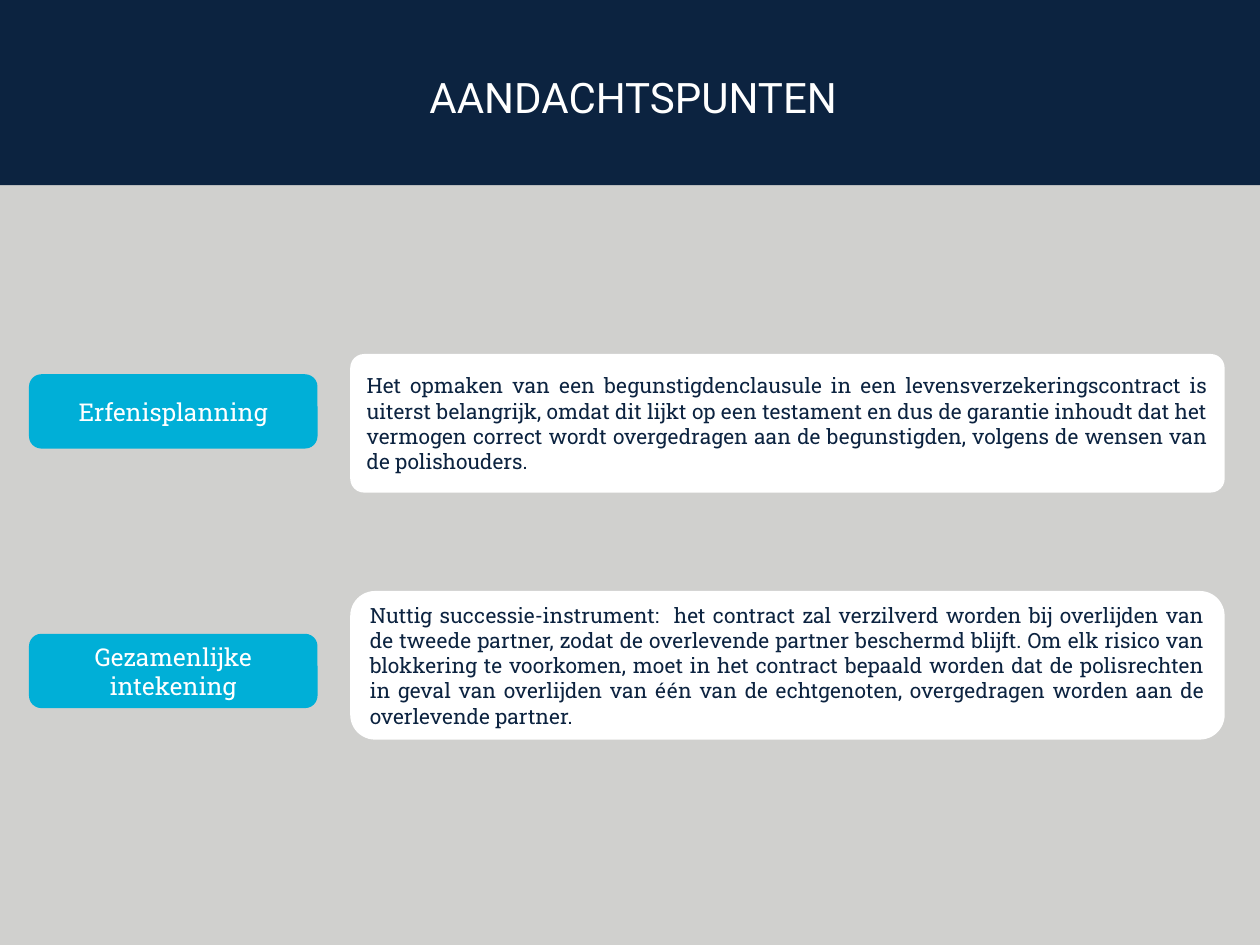
from dataclasses import dataclass

from pptx import Presentation
from pptx.dml.color import RGBColor
from pptx.enum.shapes import MSO_SHAPE
from pptx.enum.text import MSO_ANCHOR, PP_ALIGN
from pptx.util import Inches, Pt


@dataclass(frozen=True)
class Theme:
    navy: RGBColor = RGBColor.from_string("0C2340")
    cyan: RGBColor = RGBColor.from_string("00AFD7")
    grey: RGBColor = RGBColor.from_string("D0D0CE")
    white: RGBColor = RGBColor.from_string("FFFFFF")
    heading_font: str = "Roboto"
    body_font: str = "Roboto Slab"
    title_size: int = 24
    label_size: int = 14
    body_size: int = 12


THEME = Theme()
LABEL_LEFT, LABEL_WIDTH, LABEL_HEIGHT = 0.23, 2.29, 0.59
CARD_LEFT, CARD_WIDTH = 2.78, 6.94
DEFAULT_ROUNDING = 0.167

POINTS = [
    {
        "label": "Erfenisplanning",
        "label_top": 2.97,
        "card_top": 2.81,
        "card_height": 1.1,
        "rounding": 0.1,
        "body": "Het opmaken van een begunstigdenclausule in een "
                "levensverzekeringscontract is uiterst belangrijk, omdat dit "
                "lijkt op een testament en dus de garantie inhoudt dat het "
                "vermogen correct wordt overgedragen aan de begunstigden, "
                "volgens de wensen van de polishouders.",
    },
    {
        "label": "Gezamenlijke intekening",
        "label_top": 5.03,
        "card_top": 4.69,
        "card_height": 1.18,
        "rounding": DEFAULT_ROUNDING,
        "body": "Nuttig successie-instrument:  het contract zal verzilverd "
                "worden bij overlijden van de tweede partner, zodat de "
                "overlevende partner beschermd blijft. Om elk risico van "
                "blokkering te voorkomen, moet in het contract bepaald worden "
                "dat de polisrechten in geval van overlijden van één van de "
                "echtgenoten, overgedragen worden aan de overlevende partner.",
    },
]


def write_text(frame, text, font, size, color, align):
    frame.word_wrap = True
    paragraph = frame.paragraphs[0]
    paragraph.alignment = align
    run = paragraph.add_run()
    run.text = text
    run.font.name = font
    run.font.size = Pt(size)
    run.font.color.rgb = color


def add_panel(slide, preset, box, fill):
    panel = slide.shapes.add_shape(preset, *map(Inches, box))
    panel.shadow.inherit = False
    panel.fill.solid()
    panel.fill.fore_color.rgb = fill
    panel.line.fill.background()
    return panel


def add_rounded_text(slide, box, fill, rounding, text, size, color, align):
    panel = add_panel(slide, MSO_SHAPE.ROUNDED_RECTANGLE, box, fill)
    panel.adjustments[0] = rounding
    panel.text_frame.vertical_anchor = MSO_ANCHOR.MIDDLE
    write_text(panel.text_frame, text, THEME.body_font, size, color, align)


def add_point(slide, point):
    card_box = (CARD_LEFT, point["card_top"], CARD_WIDTH, point["card_height"])
    add_rounded_text(slide, card_box, THEME.white, point["rounding"],
                     point["body"], THEME.body_size, THEME.navy, PP_ALIGN.JUSTIFY)
    label_box = (LABEL_LEFT, point["label_top"], LABEL_WIDTH, LABEL_HEIGHT)
    add_rounded_text(slide, label_box, THEME.cyan, DEFAULT_ROUNDING,
                     point["label"], THEME.label_size, THEME.white, PP_ALIGN.CENTER)


def add_title(slide, text):
    add_panel(slide, MSO_SHAPE.RECTANGLE, (-0.04, 0, 10.04, 1.47), THEME.navy)
    title = slide.shapes.add_textbox(*map(Inches, (0.83, 0.52, 8.39, 0.5)))
    write_text(title.text_frame, text, THEME.heading_font, THEME.title_size,
               THEME.white, PP_ALIGN.CENTER)


def main():
    deck = Presentation()
    deck.slide_width, deck.slide_height = Inches(10), Inches(7.5)
    slide = deck.slides.add_slide(deck.slide_layouts[6])
    slide.background.fill.solid()
    slide.background.fill.fore_color.rgb = THEME.grey
    add_title(slide, "AANDACHTSPUNTEN")
    for point in POINTS:
        add_point(slide, point)
    deck.save("out.pptx")


if __name__ == "__main__":
    main()
